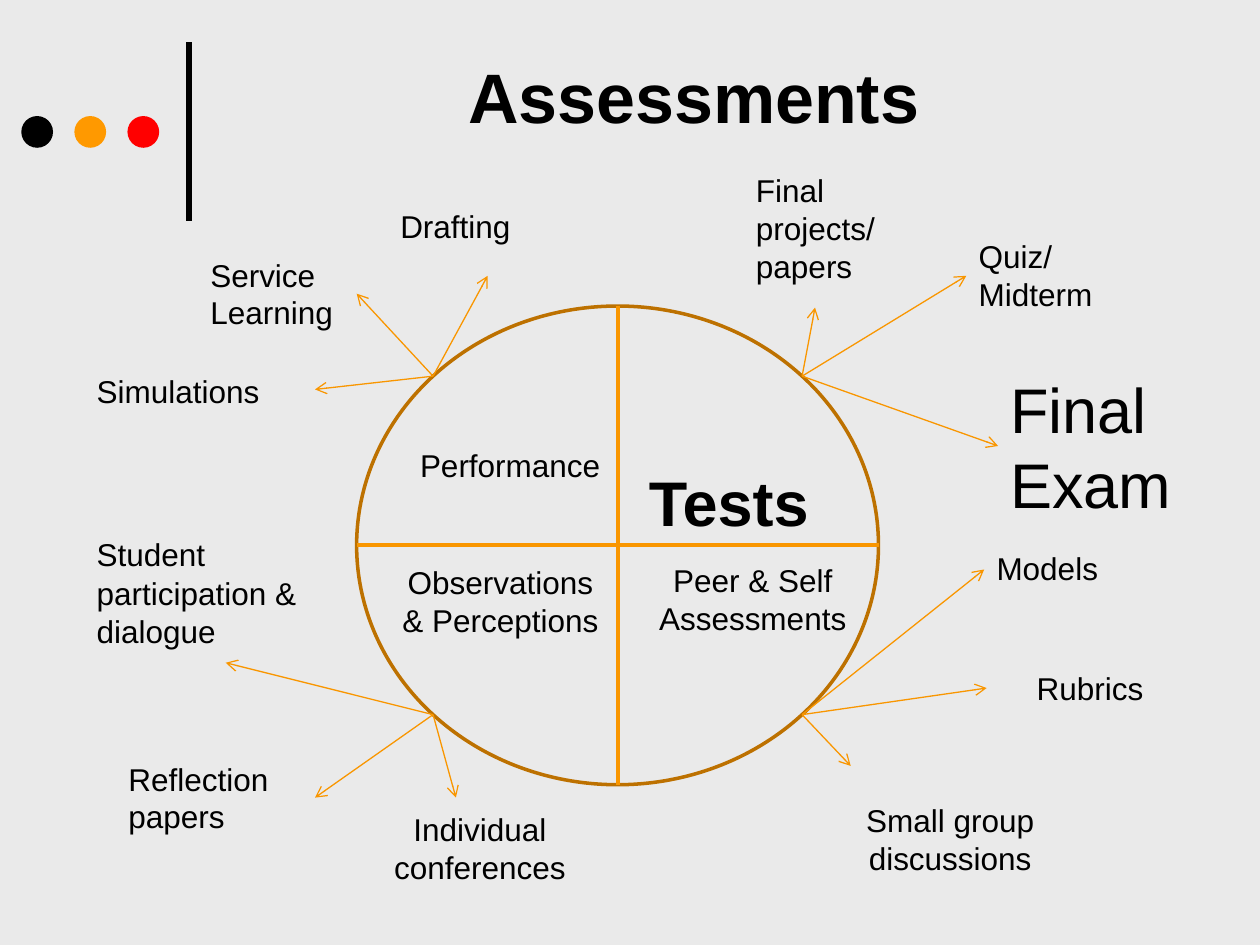
import math
from dataclasses import dataclass

import pptx
import pptx.dml.color
import pptx.enum.shapes
import pptx.enum.text
import pptx.oxml
import pptx.oxml.ns
import pptx.util
from lxml import etree

Cm = pptx.util.Cm
Pt = pptx.util.Pt
ALIGN = pptx.enum.text.PP_ALIGN
OVAL = pptx.enum.shapes.MSO_SHAPE.OVAL
STRAIGHT = pptx.enum.shapes.MSO_CONNECTOR.STRAIGHT
qn = pptx.oxml.ns.qn


@dataclass(frozen=True)
class Theme:
    font: str = "Arial"
    back: str = "EAEAEA"
    text: str = "000000"
    rim: str = "BD7100"
    spoke: str = "F99600"
    dots: tuple = ("000000", "FF9900", "FF0000")
    title: int = 40
    large: int = 36
    gap: int = 24
    body: int = 18


THEME = Theme()

# Wheel labels: text, box within the wheel, format
QUADRANTS = [
    ("Performance", (0.86, 2.69, 4.47, 1.02), dict(align=ALIGN.CENTER)),
    ("Tests", (5.64, 3.05, 3.96, 1.8), dict(size=THEME.large, bold=True)),
    ("Observations & Perceptions", (0.5, 5.06, 4.8, 1.8), dict(align=ALIGN.CENTER)),
    ("Peer & Self Assessments", (5.43, 5.01, 5.11, 1.8), dict(align=ALIGN.CENTER)),
]

STUDENT = ["Student", (" ", dict(size=THEME.gap, bold=True)), "participation & dialogue"]

# Direction of the wheel corner -> label, box and arrow tip within the diagram, format
BRANCHES = {
    (1, -1): [
        ("Quiz/ Midterm", (17.78, 1.32, 3.61, 1.8), (17.78, 2.23), {}),
        ("Final projects/ papers", (13.29, 0, 3.61, 2.57), (14.73, 2.87), {}),
        ("Final Exam", (18.42, 4.01, 4.39, 3.33), (18.42, 5.66), dict(size=THEME.large)),
    ],
    (-1, -1): [
        ("Drafting", (6.12, 0.71, 4.57, 1.02), (8.13, 2.23), {}),
        ("Service Learning", (2.29, 1.7, 3.2, 1.8), (5.49, 2.59), {}),
        ("Simulations", (0, 4.04, 4.65, 1.02), (4.65, 4.52), {}),
    ],
    (-1, 1): [
        (STUDENT, (0, 7.11, 4.65, 2.82), (2.85, 10.03), {}),
        ("Reflection papers", (0.64, 11.86, 4.01, 1.8), (4.65, 12.75), {}),
        ("Individual conferences", (5.97, 12.88, 4.01, 1.8), (7.49, 12.75),
         dict(align=ALIGN.CENTER)),
    ],
    (1, 1): [
        ("Models", (18.14, 7.62, 4.65, 1.02), (18.14, 8.15), {}),
        ("Rubrics", (18.27, 10.03, 4.01, 1.02), (18.19, 10.54), dict(align=ALIGN.CENTER)),
        ("Small group discussions", (15.45, 12.7, 4.01, 1.8), (15.45, 12.11),
         dict(align=ALIGN.CENTER)),
    ],
}


def rgb(value):
    return pptx.dml.color.RGBColor.from_string(value)


def inside(box, part):
    """Shift a part's box from its parent's corner to the slide's corner."""
    return (box[0] + part[0], box[1] + part[1], *part[2:])


def put_text(tf, text, size=THEME.body, bold=False, align=ALIGN.LEFT):
    """Fill a frame with one paragraph: a string, or a list of strings and (string, format)."""
    p = tf.paragraphs[0]
    p.alignment = align
    for part in [text] if isinstance(text, str) else text:
        words, extra = (part, {}) if isinstance(part, str) else part
        r = p.add_run()
        r.text = words
        r.font.name = THEME.font
        r.font.size = Pt(extra.get("size", size))
        r.font.bold = extra.get("bold", bold)
        r.font.color.rgb = rgb(THEME.text)


def label(s, box, text, **fmt):
    tf = s.shapes.add_textbox(*map(Cm, box)).text_frame
    tf.word_wrap = True
    tf.auto_size = pptx.enum.text.MSO_AUTO_SIZE.SHAPE_TO_FIT_TEXT
    put_text(tf, text, **fmt)


def line(s, start, end, color, width, arrow=False):
    c = s.shapes.add_connector(STRAIGHT, *map(Cm, (*start, *end)))
    c.line.color.rgb = rgb(color)
    c.line.width = Pt(width)
    if arrow:
        etree.SubElement(c.line._get_or_add_ln(), qn("a:tailEnd"), type="arrow")
    etree.SubElement(c._element.spPr, qn("a:effectLst"))


def oval(s, box, fill=None, outline=None, width=0):
    sp = s.shapes.add_shape(OVAL, *map(Cm, box))
    sp.shadow.inherit = False
    if fill:
        sp.fill.solid()
        sp.fill.fore_color.rgb = rgb(fill)
    else:
        sp.fill.background()
    if outline:
        sp.line.color.rgb = rgb(outline)
        sp.line.width = Pt(width)
    else:
        sp.line.fill.background()


def heading(s, box, text):
    sp = s.shapes.title
    sp.left, sp.top, sp.width, sp.height = map(Cm, box)
    sp.text_frame.vertical_anchor = pptx.enum.text.MSO_ANCHOR.MIDDLE
    put_text(sp.text_frame, text, size=THEME.title, bold=True, align=ALIGN.CENTER)


def ornament(s, box):
    """Three dots with an upright bar along the right edge of the box."""
    x, y, w, h = box
    line(s, (x + w, y + h), (x + w, y), THEME.text, 3)
    for i, color in enumerate(THEME.dots):
        oval(s, inside(box, (1.07 * i, 1.5, 0.64, 0.64)), fill=color)


def wheel(s, box):
    x, y, w, h = box
    cx, cy = x + w / 2, y + h / 2
    oval(s, box, outline=THEME.rim, width=2)
    line(s, (cx, y), (cx, y + h), THEME.spoke, 2.25)
    line(s, (x, cy), (x + w, cy), THEME.spoke, 2.25)
    for text, part, fmt in QUADRANTS:
        label(s, inside(box, part), text, **fmt)


def diagram(s, box):
    """The wheel, and the branches that leave its rim at 45 degrees."""
    x, y, w, h = rim = inside(box, (5.49, 2.84, 10.52, 9.65))
    wheel(s, rim)
    k = math.sqrt(0.5)
    for (dx, dy), items in BRANCHES.items():
        start = (x + w / 2 * (1 + k * dx), y + h / 2 * (1 + k * dy))
        for text, part, tip, fmt in items:
            line(s, start, inside(box, tip), THEME.spoke, 0.75, arrow=True)
            label(s, inside(box, part), text, **fmt)


def main():
    prs = pptx.Presentation()
    prs.slide_width, prs.slide_height = Cm(25.4), Cm(19.05)
    s = prs.slides.add_slide(prs.slide_layouts[5])
    s.background.fill.solid()
    s.background.fill.fore_color.rgb = rgb(THEME.back)
    ornament(s, (0.43, 0.84, 3.38, 3.61))
    heading(s, (4.24, 0.53, 19.48, 2.79), "Assessments")
    diagram(s, (1.7, 3.33, 22.8, 14.68))
    prs.save("out.pptx")


if __name__ == "__main__":
    main()
